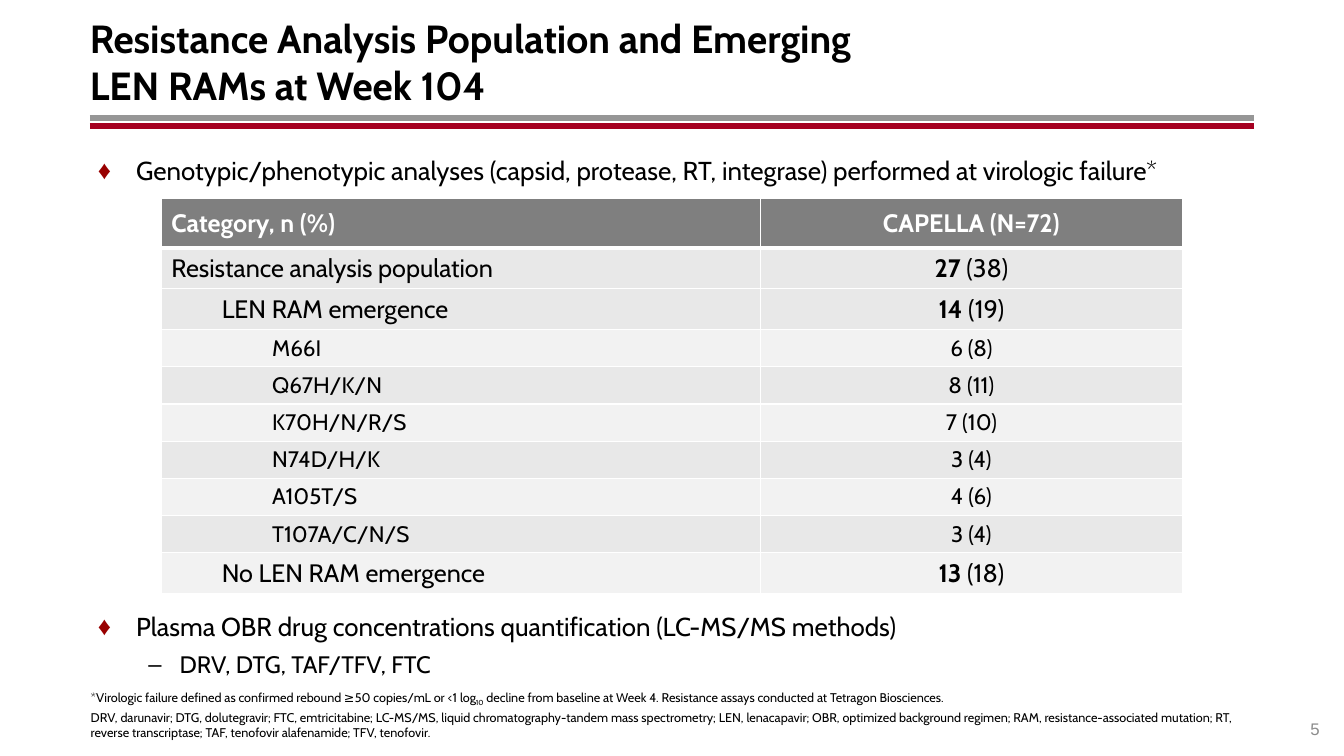
import pptx
import pptx.util
import pptx.dml.color
import pptx.enum.shapes
import pptx.enum.text
import pptx.oxml
import pptx.oxml.ns
import lxml.etree

COLOURS = {
    "text": "000000", "white": "FFFFFF", "grey_rule": "969696",
    "red_rule": "A50021", "bullet": "990000", "number": "8C8C8C",
    "header": "7F7F7F", "dark_band": "E8E8E8", "light_band": "F2F2F2",
}
ALIGN = pptx.enum.text.PP_ALIGN
ANCHOR = pptx.enum.text.MSO_ANCHOR
Pt = pptx.util.Pt
Inches = pptx.util.Inches


def add_xml(parent, tag, **attributes):
    """Append a drawing element to its parent."""
    element = lxml.etree.SubElement(parent, pptx.oxml.ns.qn(tag))
    for name, value in attributes.items():
        element.set(name, str(value))
    return element


class SlideBuilder:
    """Holds the style and the slide; places are percentages of its size."""

    font = "Cabin"

    def __init__(self, presentation):
        self.width = presentation.slide_width
        self.height = presentation.slide_height
        self.slide = presentation.slides.add_slide(presentation.slide_layouts[5])

    def across(self, share):
        return round(self.width * share / 100)

    def down(self, share):
        return round(self.height * share / 100)

    def box(self, left, top, width, height):
        return self.across(left), self.down(top), self.across(width), self.down(height)

    def style(self, run, size, colour="text", bold=False, font=None):
        run.font.name = font or self.font
        run.font.size = Pt(size)
        run.font.bold = bold
        run.font.color.rgb = pptx.dml.color.RGBColor.from_string(COLOURS[colour])

    def frame(self, text_frame, insets, anchor=ANCHOR.TOP):
        text_frame.word_wrap = True
        text_frame.auto_size = pptx.enum.text.MSO_AUTO_SIZE.NONE
        text_frame.vertical_anchor = anchor
        (text_frame.margin_left, text_frame.margin_top,
         text_frame.margin_right, text_frame.margin_bottom) = map(Inches, insets)

    def title(self, place, text):
        shape = self.slide.shapes.title
        shape.left, shape.top, shape.width, shape.height = self.box(*place)
        self.frame(shape.text_frame, (0, 0.05, 0.1, 0.05), ANCHOR.MIDDLE)
        shape.text_frame.text = text
        paragraph = shape.text_frame.paragraphs[0]
        paragraph.alignment = ALIGN.LEFT
        for run in paragraph.runs:
            self.style(run, 28, bold=True)

    def rule(self, left, right, top, colour):
        line = self.slide.shapes.add_connector(
            pptx.enum.shapes.MSO_CONNECTOR.STRAIGHT, self.across(left),
            self.down(top), self.across(right), self.down(top))
        line.line.width = Pt(4.25)
        line.line.color.rgb = pptx.dml.color.RGBColor.from_string(COLOURS[colour])
        add_xml(line._element.spPr, "a:effectLst")

    def textbox(self, place, insets=(0, 0, 0, 0), anchor=ANCHOR.TOP):
        text_frame = self.slide.shapes.add_textbox(*self.box(*place)).text_frame
        self.frame(text_frame, insets, anchor)
        return text_frame

    def bullets(self, place, heading, *details):
        text_frame = self.textbox(place, (0, 0.05, 0, 0.05))
        text_frame.text = "\n".join((heading, *details))
        for index, paragraph in enumerate(text_frame.paragraphs):
            detail = index > 0
            margin, hanging = (0.81, 0.31) if detail else (0.38, 0.38)
            paragraph.level = int(detail)
            paragraph.space_before = Pt(6 if detail else 10)
            if not detail:
                paragraph.line_spacing = Pt(25)
            properties = paragraph._p.get_or_add_pPr()
            properties.set("marL", str(Inches(margin)))
            properties.set("indent", str(-Inches(hanging)))
            if not detail:
                add_xml(add_xml(properties, "a:buClr"), "a:srgbClr", val=COLOURS["bullet"])
            add_xml(properties, "a:buFont", typeface="Arial")
            add_xml(properties, "a:buChar", char="–" if detail else "♦")
            self.style(paragraph.runs[0], 17 if detail else 18.5)

    def footnotes(self, place, notes):
        """Each note is a list of (text, is_subscript) pieces."""
        text_frame = self.textbox(place, anchor=ANCHOR.BOTTOM)
        for index, pieces in enumerate(notes):
            paragraph = text_frame.add_paragraph() if index else text_frame.paragraphs[0]
            paragraph.space_before = Pt(2 if index else 0)
            for text, subscript in pieces:
                run = paragraph.add_run()
                run.text = text
                self.style(run, 9)
                if subscript:
                    run.font._element.set("baseline", "-25000")

    def page_number(self, place, number):
        text_frame = self.textbox(place, anchor=ANCHOR.BOTTOM)
        text_frame.text = number
        text_frame.paragraphs[0].alignment = ALIGN.RIGHT
        self.style(text_frame.paragraphs[0].runs[0], 12, "number", font="Arial")

    def cell(self, cell, pieces, size, fill, colour="text", indent=0, centred=False, bottom=1):
        """Pieces are (text, is_bold) pairs."""
        cell.vertical_anchor = ANCHOR.MIDDLE
        paragraph = cell.text_frame.paragraphs[0]
        paragraph.alignment = ALIGN.CENTER if centred else ALIGN.LEFT
        if indent:
            paragraph._p.get_or_add_pPr().set("marL", str(Inches(indent)))
        for text, bold in pieces:
            run = paragraph.add_run()
            run.text = text
            self.style(run, size, colour, bold)
        properties = cell._tc.get_or_add_tcPr()
        for side in "LRTB":
            border = add_xml(properties, f"a:ln{side}", w=Pt(bottom if side == "B" else 1))
            add_xml(add_xml(border, "a:solidFill"), "a:srgbClr", val=COLOURS["white"])
        cell.fill.solid()
        cell.fill.fore_color.rgb = pptx.dml.color.RGBColor.from_string(COLOURS[fill])

    def table(self, place, columns, header_height, row_height, header, rows):
        table = self.slide.shapes.add_table(len(rows) + 1, len(columns), *self.box(*place)).table
        table.horz_banding = False
        for column, width in zip(table.columns, columns):
            column.width = self.across(width)
        for index, row in enumerate(table.rows):
            row.height = self.down(row_height if index else header_height)
        for index, text in enumerate(header):
            self.cell(table.cell(0, index), [(text, True)], 18, "header", "white",
                      centred=index > 0, bottom=3)
        for index, (label, indent, count, percent) in enumerate(rows, 1):
            mutation = indent == 1
            size = 16 if mutation else 18
            fill = "dark_band" if index == 1 or index % 2 == 0 else "light_band"
            self.cell(table.cell(index, 0), [(label, False)], size, fill, indent=indent)
            self.cell(table.cell(index, 1), [(count, not mutation), (f" ({percent})", False)],
                      size, fill, centred=True)


def main():
    presentation = pptx.Presentation()
    presentation.slide_width = Inches(13.33)
    presentation.slide_height = Inches(7.5)
    builder = SlideBuilder(presentation)

    # Title and the double rule beneath it
    builder.title((6.68, 2.4, 86.65, 11.47),
                  "Resistance Analysis Population and Emerging\vLEN RAMs at Week 104")
    for top, colour in ((15.6, "grey_rule"), (16.67, "red_rule")):
        builder.rule(6.68, 93.32, top, colour)

    # Results table between the two bullet blocks
    builder.bullets(
        (7.28, 19.33, 86.2, 5.6),
        "Genotypic/phenotypic analyses (capsid, protease, RT, integrase) "
        "performed at virologic failure*")
    builder.table(
        (12, 26.27, 76, 51.87), (44.56, 31.43), 6.53, 4.53,
        ("Category, n (%)", "CAPELLA (N=72)"),
        [("Resistance analysis population", 0, "27", 38),
         ("LEN RAM emergence", 0.5, "14", 19),
         ("M66I", 1, "6", 8),
         ("Q67H/K/N", 1, "8", 11),
         ("K70H/N/R/S", 1, "7", 10),
         ("N74D/H/K", 1, "3", 4),
         ("A105T/S", 1, "4", 6),
         ("T107A/C/N/S", 1, "3", 4),
         ("No LEN RAM emergence", 0.5, "13", 18)])
    builder.bullets(
        (7.28, 79.6, 84.32, 10.93),
        "Plasma OBR drug concentrations quantification (LC-MS/MS methods)",
        "DRV, DTG, TAF/TFV, FTC")

    # Footnotes and page number
    builder.footnotes((6.75, 91.2, 86.65, 6.67), [
        [("*Virologic failure defined as confirmed rebound ≥50 copies/mL or <1 log", False),
         ("10", True),
         (" decline from baseline at Week 4. Resistance assays conducted at "
          "Tetragon Biosciences.", False)],
        [("DRV, darunavir; DTG, dolutegravir; FTC, emtricitabine; LC-MS/MS, liquid "
          "chromatography-tandem mass spectrometry; LEN, lenacapavir; OBR, optimized "
          "background regimen; RAM, resistance-associated mutation; RT, reverse "
          "transcriptase; TAF, tenofovir alafenamide; TFV, tenofovir.", False)]])
    builder.page_number((93.32, 92.4, 4.88, 5.33), "5")

    presentation.save("out.pptx")


if __name__ == "__main__":
    main()
